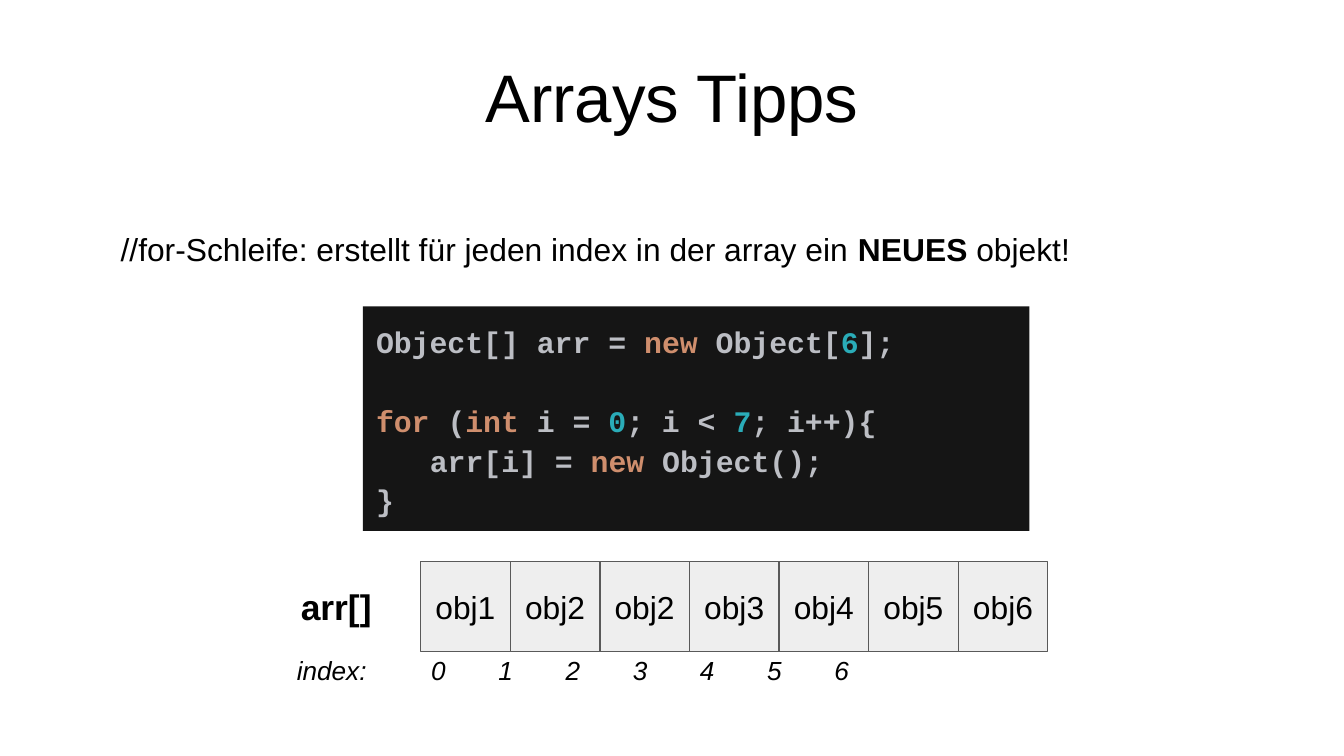
from lxml.etree import SubElement
from pptx import Presentation
from pptx.dml.color import RGBColor
from pptx.enum.shapes import MSO_SHAPE
from pptx.enum.text import MSO_ANCHOR, MSO_AUTO_SIZE, PP_ALIGN
from pptx.oxml.ns import qn
from pptx.util import Inches, Pt

BLACK = "000000"
PLAIN, KEYWORD, NUMBER = "BCBEC4", "CF8E6D", "2AACB8"
CELL_PITCH = 2 / 3
OBJECTS = ["obj1", "obj2", "obj2", "obj3", "obj4", "obj5", "obj6"]
CODE = [
    [("Object[] arr = ", PLAIN), ("new ", KEYWORD), ("Object[", PLAIN),
     ("6", NUMBER), ("];", PLAIN)],
    [("for ", KEYWORD), ("(", PLAIN), ("int ", KEYWORD), ("i = ", PLAIN),
     ("0", NUMBER), ("; i < ", PLAIN), ("7", NUMBER), ("; i++){", PLAIN)],
    [("arr[i] = ", PLAIN), ("new ", KEYWORD), ("Object();", PLAIN)],
    [("}", PLAIN)],
]


def rgb(code):
    """Return the colour for a hex string."""
    return RGBColor.from_string(code)


def add_run(paragraph, text, size=17, font="Arial", color=BLACK, bold=False, italic=False):
    """Append formatted text to a paragraph."""
    run = paragraph.add_run()
    run.text = text
    run.font.size = Pt(size)
    run.font.name = font
    run.font.color.rgb = rgb(color)
    run.font.bold = bold
    run.font.italic = italic


def prepare_frame(holder, anchor=MSO_ANCHOR.TOP, align=PP_ALIGN.LEFT):
    """Set margins, wrapping and alignment, and return the text frame."""
    frame = holder.text_frame
    frame.margin_left = frame.margin_right = Inches(0.1)
    frame.margin_top = frame.margin_bottom = Inches(0.1)
    frame.word_wrap = True
    frame.auto_size = MSO_AUTO_SIZE.NONE
    frame.vertical_anchor = anchor
    frame.paragraphs[0].alignment = align
    return frame


def add_label(slide, left, top, width, height):
    """Add a text box and return its first paragraph."""
    box = slide.shapes.add_textbox(Inches(left), Inches(top), Inches(width), Inches(height))
    return prepare_frame(box).paragraphs[0]


def add_box(shapes, left, top, width, height, fill, line=None):
    """Add a flat rectangle with an optional outline."""
    box = shapes.add_shape(MSO_SHAPE.RECTANGLE, Inches(left), Inches(top),
                           Inches(width), Inches(height))
    box.shadow.inherit = False
    box.fill.solid()
    box.fill.fore_color.rgb = rgb(fill)
    if line:
        box.line.color.rgb = rgb(line)
        box.line.width = Pt(0.75)
    else:
        box.line.fill.background()
    return box


def add_title(slide, text):
    """Place and fill the title placeholder."""
    title = slide.shapes.title
    title.left, title.top = Inches(0.34), Inches(0.25)
    title.width, title.height = Inches(9.32), Inches(0.92)
    frame = prepare_frame(title, MSO_ANCHOR.MIDDLE, PP_ALIGN.CENTER)
    add_run(frame.paragraphs[0], text, size=36)


def add_cells(slide):
    """Draw the array as a grouped row of equal cells."""
    cells = slide.shapes.add_group_shape()
    for position, name in enumerate(OBJECTS):
        cell = add_box(cells.shapes, 3.13 + position * CELL_PITCH, 4.18,
                       CELL_PITCH, CELL_PITCH, "EEEEEE", "595959")
        frame = prepare_frame(cell, MSO_ANCHOR.MIDDLE, PP_ALIGN.CENTER)
        add_run(frame.paragraphs[0], name)


def add_indices(slide):
    """Write the index row with a centred tab stop under each cell."""
    indices = add_label(slide, 2.06, 4.77, 5.65, 0.32)
    properties = indices._p.get_or_add_pPr()
    properties.set("marL", str(Inches(0.05)))
    properties.set("indent", "0")
    tab_list = SubElement(properties, qn("a:tabLst"))
    for position in range(len(OBJECTS)):
        stop = Inches(1.28 + position * CELL_PITCH)
        SubElement(tab_list, qn("a:tab"), pos=str(stop), algn="ctr")
    numbers = [str(position) for position in range(len(OBJECTS))]
    add_run(indices, "\t".join(["index:"] + numbers), size=14, italic=True)


def add_code(slide):
    """Draw the dark code panel with coloured syntax."""
    panel = add_box(slide.shapes, 2.7, 2.28, 4.96, 1.67, "151515")
    frame = prepare_frame(panel)
    for number, parts in enumerate(CODE):
        line = frame.add_paragraph() if number else frame.paragraphs[0]
        line.alignment = PP_ALIGN.LEFT
        line.line_spacing = 1.11
        if number == 1:
            line.space_before = Pt(21)
        if number == 2:
            line._p.get_or_add_pPr().set("marL", str(Inches(0.4)))
        for text, color in parts:
            add_run(line, text, size=16, font="Courier New", color=color, bold=True)


def main():
    """Build and save the slide."""
    presentation = Presentation()
    presentation.slide_width = Inches(10)
    presentation.slide_height = Inches(10 * 9 / 16)
    slide = presentation.slides.add_slide(presentation.slide_layouts[5])
    add_title(slide, "Arrays Tipps")
    add_cells(slide)
    add_run(add_label(slide, 2.14, 4.25, 0.8, 0.52), "arr[]", size=19, bold=True)
    add_indices(slide)
    explanation = add_label(slide, 0.8, 1.61, 8.36, 0.49)
    add_run(explanation, "//for-Schleife: erstellt für jeden index in der array ein ")
    add_run(explanation, "NEUES", bold=True)
    add_run(explanation, " objekt!")
    add_code(slide)
    presentation.save("out.pptx")


if __name__ == "__main__":
    main()
